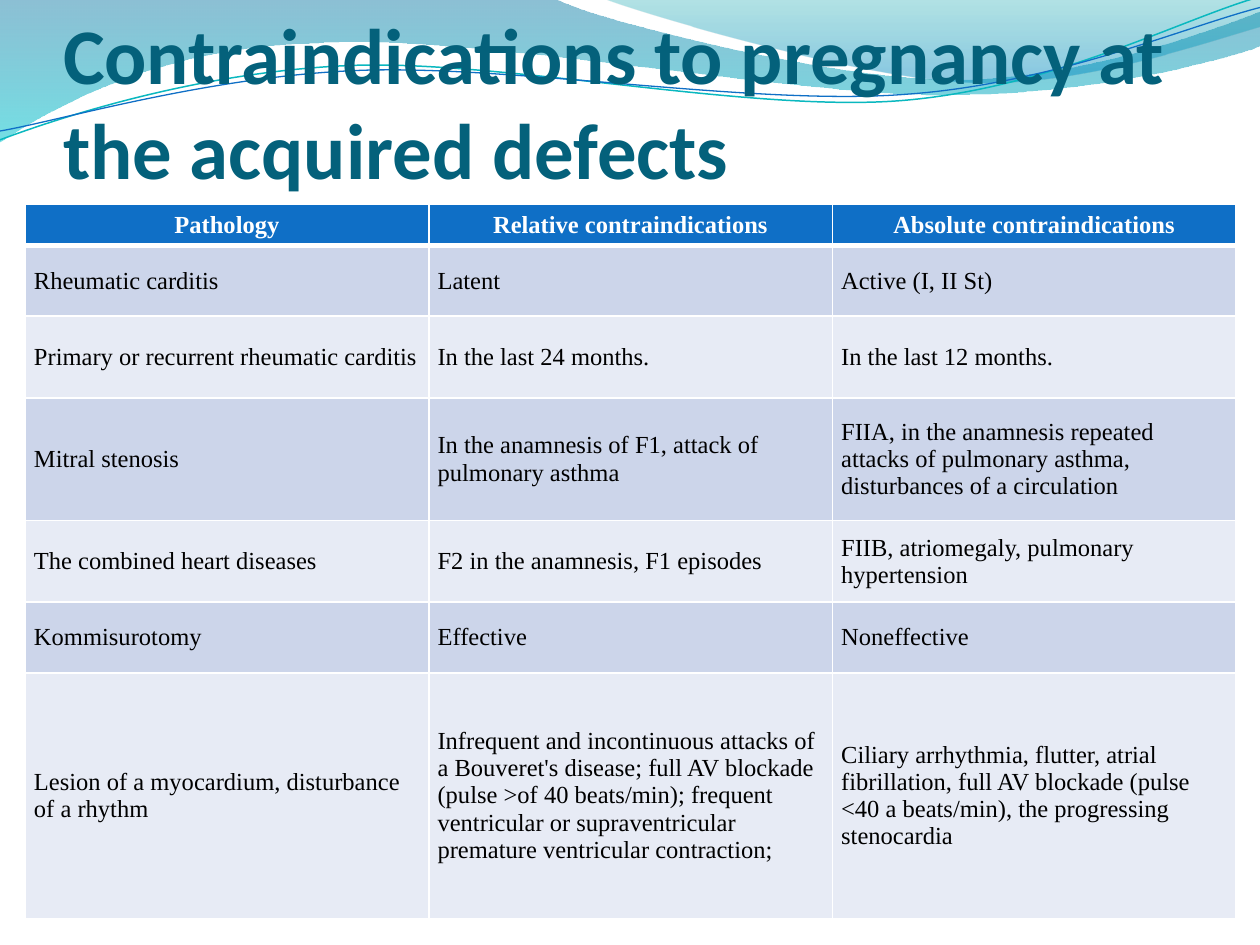
from math import cos, radians, sin

from lxml.etree import SubElement
from pptx import Presentation
from pptx.dml.color import RGBColor
from pptx.enum.text import MSO_ANCHOR, MSO_AUTO_SIZE, PP_ALIGN
from pptx.oxml import parse_xml
from pptx.oxml.ns import nsdecls, qn
from pptx.util import Inches, Pt

TITLE = "Contraindications to pregnancy at the acquired defects"
HEADER = ("Pathology", "Relative contraindications", "Absolute contraindications")
CONDITIONS = [
    ("Rheumatic carditis", "Latent", "Active (I, II St)"),
    ("Primary or recurrent rheumatic carditis",
     "In the last 24 months.", "In the last 12 months."),
    ("Mitral stenosis", "In the anamnesis of F1, attack of pulmonary asthma",
     "FIIA, in the anamnesis repeated attacks of pulmonary asthma, "
     "disturbances of a circulation"),
    ("The combined heart diseases", "F2 in the anamnesis, F1 episodes",
     "FIIB, atriomegaly, pulmonary hypertension"),
    ("Kommisurotomy", "Effective", "Noneffective"),
    ("Lesion of a myocardium, disturbance of a rhythm",
     "Infrequent and incontinuous attacks of a Bouveret's disease; full AV blockade "
     "(pulse >of 40 beats/min); frequent ventricular or supraventricular premature "
     "ventricular contraction;",
     "Ciliary arrhythmia, flutter, atrial fibrillation, full AV blockade "
     "(pulse <40 a beats/min), the progressing stenocardia"),
]
ROW_HEIGHTS = (0.33, 0.56, 0.65, 0.97, 0.65, 0.56, 1.95)
TABLE_LEFT, TABLE_TOP, TABLE_WIDTH = 0.2, 1.62, 9.61
HEADER_FILL, BAND_FILLS = "0F6FC6", ("CCD5EA", "E7EBF5")

# Outlines in inches: a start point, then lines (x, y) and
# Bezier curves (control 1, control 2, end).
# Gradient stops: position, colour, opacity in percent.
WAVES = [
    ([(0, 0), (4.4, -0.01),
      (4.76, 0.17, 6.64, 0.63, 7.58, 0.63), (8.53, 0.63, 9.58, 0.26, 10, 0.09),
      (10.01, 0.36),
      (9.83, 0.44, 8.7, 0.76, 7.46, 0.75), (6.22, 0.75, 3.82, 0.28, 2.57, 0.34),
      (1.29, 0.36, 0.46, 0.83, -0.01, 1.13), (0, 0)],
     [(0, "0074A1", 45), (1, "00C6CF", 55)]),
    ([(4.79, -0.01),
      (5.09, 0.11, 6.82, 0.62, 7.69, 0.65), (8.56, 0.69, 9.61, 0.32, 10, 0.21),
      (10, 0), (4.79, -0.01)],
     [(0, "00A1A9", 30), (0.8, "008BBF", 45)]),
]
# Strands: outline as seen, centre of rotation, colour, width in points.
STRANDS = [
    ([(0, 1.11), (0.48, 0.93, 1.58, 0.57, 2.77, 0.52),
      (3.95, 0.47, 5.93, 0.89, 7.13, 0.8), (8.33, 0.71, 9.38, 0.15, 9.98, -0.02)],
     (4.99, 0.57), "0AB8BF", 0.85),
    ([(0, 1.04), (0.47, 0.96, 1.64, 0.61, 2.83, 0.56),
      (4.03, 0.51, 5.97, 0.84, 7.17, 0.75), (8.36, 0.67, 9.41, 0.21, 10, 0.06)],
     (5, 0.59), "0F6FC6", 0.75),
]
STRAND_TILT = 2.7


def color(hex_code):
    return RGBColor.from_string(hex_code)


def pairs(segment):
    return list(zip(segment[::2], segment[1::2]))


def add_outline(shapes, outline, close):
    """Build a freeform through all points, then join each curve's three lines."""
    start, *rest = [(Inches(x), Inches(y)) for segment in outline for x, y in pairs(segment)]
    builder = shapes.build_freeform(*start)
    builder.add_line_segments(rest, close=close)
    shape = builder.convert_to_shape()
    shape.shadow.inherit = False
    lines = iter(list(shape.element.iter(qn("a:lnTo"))))
    for segment in outline[1:]:
        legs = [next(lines) for _ in pairs(segment)]
        if len(legs) == 3:
            curve = parse_xml(f'<a:cubicBezTo {nsdecls("a")}/>')
            legs[0].addprevious(curve)
            for leg in legs:
                curve.append(leg[0])
                leg.getparent().remove(leg)
    return shape


def add_wave(slide, outline, stops):
    wave = add_outline(slide.shapes, outline, close=True)
    wave.line.fill.background()
    wave.fill.gradient()
    wave.fill.gradient_angle = 270
    for stop, (position, hex_code, _) in zip(wave.fill.gradient_stops, stops):
        stop.position = position
        stop.color.rgb = color(hex_code)
    for rgb, (_, _, opacity) in zip(wave.element.spPr.iter(qn("a:srgbClr")), stops):
        SubElement(rgb, qn("a:alpha"), val=str(opacity * 1000))


def level(outline, centre):
    """Turn an outline clockwise by the tilt that the shape's rotation undoes."""
    c, s = cos(radians(STRAND_TILT)), sin(radians(STRAND_TILT))
    cx, cy = centre
    return [[value for x, y in pairs(segment)
             for value in (cx + (x - cx) * c - (y - cy) * s,
                           cy + (x - cx) * s + (y - cy) * c)]
            for segment in outline]


def add_strand(group, outline, centre, hex_code, width):
    strand = add_outline(group.shapes, level(outline, centre), close=False)
    strand.rotation = 360 - STRAND_TILT
    strand.fill.background()
    strand.line.color.rgb = color(hex_code)
    strand.line.width = Pt(width)


def add_run(paragraph, text, size, font, hex_code, bold):
    run = paragraph.add_run()
    run.text = text
    run.font.size, run.font.name, run.font.bold = Pt(size), font, bold
    run.font.color.rgb = color(hex_code)


def place_title(slide):
    title = slide.shapes.title
    title.left, title.top, title.width, title.height = map(Inches, (0.5, 0.77, 9, 0.78))
    frame = title.text_frame
    frame.auto_size, frame.word_wrap = MSO_AUTO_SIZE.NONE, True
    frame.vertical_anchor = MSO_ANCHOR.BOTTOM
    frame.margin_left = frame.margin_right = frame.margin_bottom = 0
    frame.margin_top = Inches(0.05)
    frame.paragraphs[0].alignment = PP_ALIGN.LEFT
    add_run(frame.paragraphs[0], TITLE, 45, "Calibri", "04617B", True)
    title.element.getparent().append(title.element)  # in front of the waves


def set_borders(cell, widths):
    """Draw white borders; widths are points for left, right, top, bottom."""
    properties = cell._tc.get_or_add_tcPr()
    for index, (side, width) in enumerate(zip("LRTB", widths)):
        properties.insert(index, parse_xml(
            f'<a:ln{side} {nsdecls("a")} w="{Pt(width)}"><a:solidFill>'
            f'<a:srgbClr val="FFFFFF"/></a:solidFill></a:ln{side}>'))


def fill_cell(cell, text, row):
    is_header = row == 0
    cell.fill.solid()
    cell.fill.fore_color.rgb = color(HEADER_FILL if is_header else BAND_FILLS[(row - 1) % 2])
    set_borders(cell, (1, 1, 3 if row == 1 else 1, 3 if is_header else 1))
    cell.vertical_anchor = MSO_ANCHOR.MIDDLE
    cell.margin_left = cell.margin_right = Inches(0.07)
    cell.margin_top = cell.margin_bottom = 0
    paragraph = cell.text_frame.paragraphs[0]
    paragraph.alignment = PP_ALIGN.CENTER if is_header else PP_ALIGN.LEFT
    add_run(paragraph, text, 14, "Times New Roman",
            "FFFFFF" if is_header else "000000", is_header)


def add_contraindications(slide):
    rows = [HEADER, *CONDITIONS]
    table = slide.shapes.add_table(
        len(rows), len(HEADER), Inches(TABLE_LEFT), Inches(TABLE_TOP),
        Inches(TABLE_WIDTH), Inches(sum(ROW_HEIGHTS))).table
    for row, (texts, height) in enumerate(zip(rows, ROW_HEIGHTS)):
        table.rows[row].height = Inches(height)
        for column, text in enumerate(texts):
            fill_cell(table.cell(row, column), text, row)


def main():
    deck = Presentation()
    deck.slide_width, deck.slide_height = Inches(10), Inches(7.5)
    slide = deck.slides.add_slide(deck.slide_layouts[5])
    for outline, stops in WAVES:
        add_wave(slide, outline, stops)
    strands = slide.shapes.add_group_shape()
    for strand in STRANDS:
        add_strand(strands, *strand)
    place_title(slide)
    add_contraindications(slide)
    deck.save("out.pptx")


if __name__ == "__main__":
    main()
